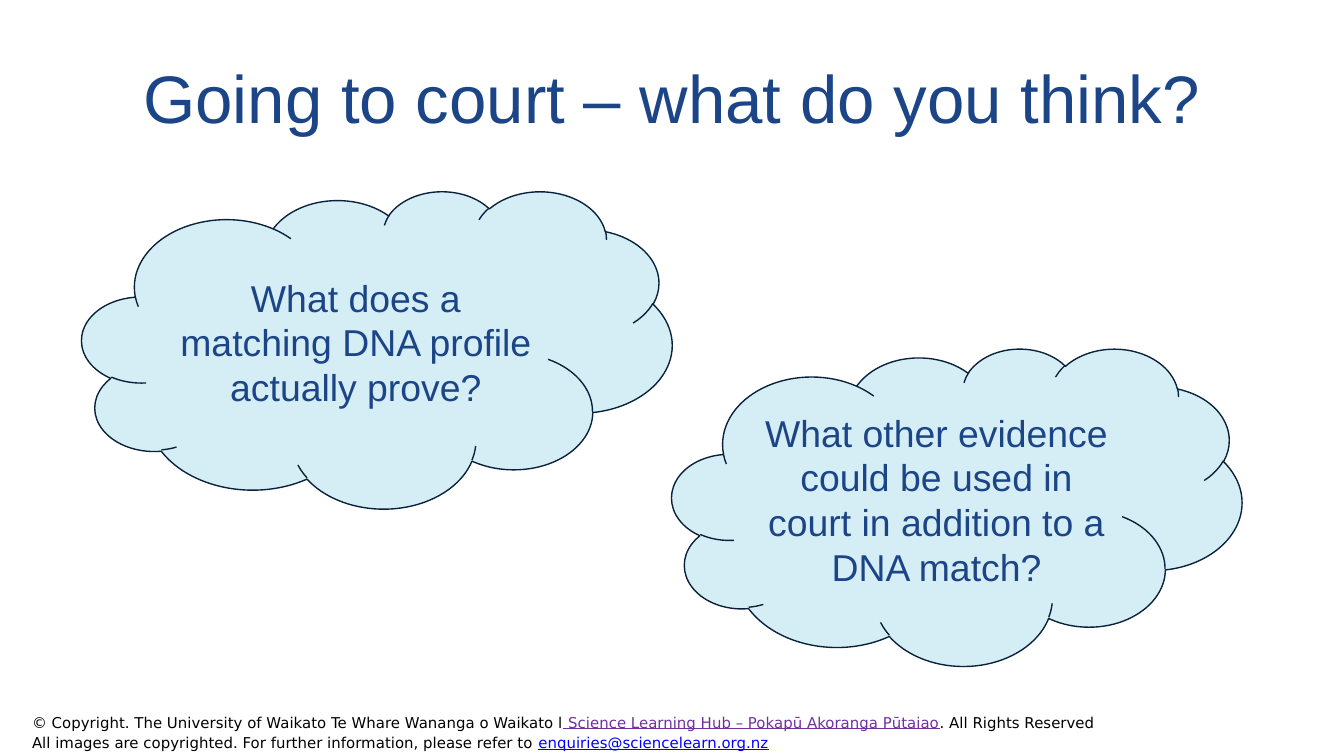
from pptx import Presentation
from pptx.dml.color import RGBColor
from pptx.enum.shapes import MSO_SHAPE as Shape
from pptx.enum.text import MSO_ANCHOR as Anchor, PP_ALIGN as Align
from pptx.util import Pt

NAVY, PALE, OUTLINE = "1C4587", "D5EDF4", "09213B"
BLACK, PURPLE, BLUE = "000000", "7030A0", "0000FF"


def color(value):
    return RGBColor.from_string(value)


def add_text(p, text, font="Arial", size=20, fill=NAVY, underline=False):
    r = p.add_run()
    r.text = text
    r.font.name = font
    r.font.size = Pt(size)
    r.font.color.rgb = color(fill)
    r.font.underline = underline


def set_frame(tf, anchor, side=7.2, edge=7.2):
    tf.word_wrap = True
    tf.vertical_anchor = anchor
    tf.margin_left = tf.margin_right = Pt(side)
    tf.margin_top = tf.margin_bottom = Pt(edge)


def place_title(s, box, text):
    sp = s.shapes.title
    sp.left, sp.top, sp.width, sp.height = map(Pt, box)
    set_frame(sp.text_frame, Anchor.BOTTOM)
    p = sp.text_frame.paragraphs[0]
    p.alignment = Align.CENTER
    add_text(p, text, size=36)


def add_cloud(s, box, question):
    sp = s.shapes.add_shape(Shape.CLOUD, *map(Pt, box))
    sp.shadow.inherit = False
    sp.fill.solid()
    sp.fill.fore_color.rgb = color(PALE)
    sp.line.color.rgb = color(OUTLINE)
    sp.line.width = Pt(0.75)
    set_frame(sp.text_frame, Anchor.MIDDLE)
    p = sp.text_frame.paragraphs[0]
    p.alignment = Align.CENTER
    add_text(p, question)


def add_footer(s, box, lines):
    tf = s.shapes.add_textbox(*map(Pt, box)).text_frame
    set_frame(tf, Anchor.MIDDLE, edge=3.6)
    for i, parts in enumerate(lines):
        p = tf.add_paragraph() if i else tf.paragraphs[0]
        p.line_spacing = 1.15
        for text, fill in parts:
            add_text(p, text, font="DejaVu Sans", size=8, fill=fill,
                     underline=fill != BLACK)


def main():
    prs = Presentation()
    prs.slide_width, prs.slide_height = Pt(720), Pt(405)
    s = prs.slides.add_slide(prs.slide_layouts[5])
    place_title(s, (24.5, 35.3, 671, 45.4), "Going to court – what do you think?")
    add_cloud(s, (43.9, 102.2, 316.1, 170),
              "What does a matching DNA profile actually prove?")
    add_cloud(s, (360, 186.5, 305.3, 170),
              "What other evidence could be used in court in addition to a DNA match?")
    add_footer(s, (10.1, 373.7, 671.8, 36), [
        [("© Copyright. The University of Waikato Te Whare Wananga o Waikato l", BLACK),
         (" Science Learning Hub – Pokapū Akoranga Pūtaiao", PURPLE),
         (". All Rights Reserved", BLACK)],
        [("All images are copyrighted. For further information, please refer to ", BLACK),
         ("enquiries@sciencelearn.org.nz", BLUE)],
    ])
    prs.save("out.pptx")


if __name__ == "__main__":
    main()
